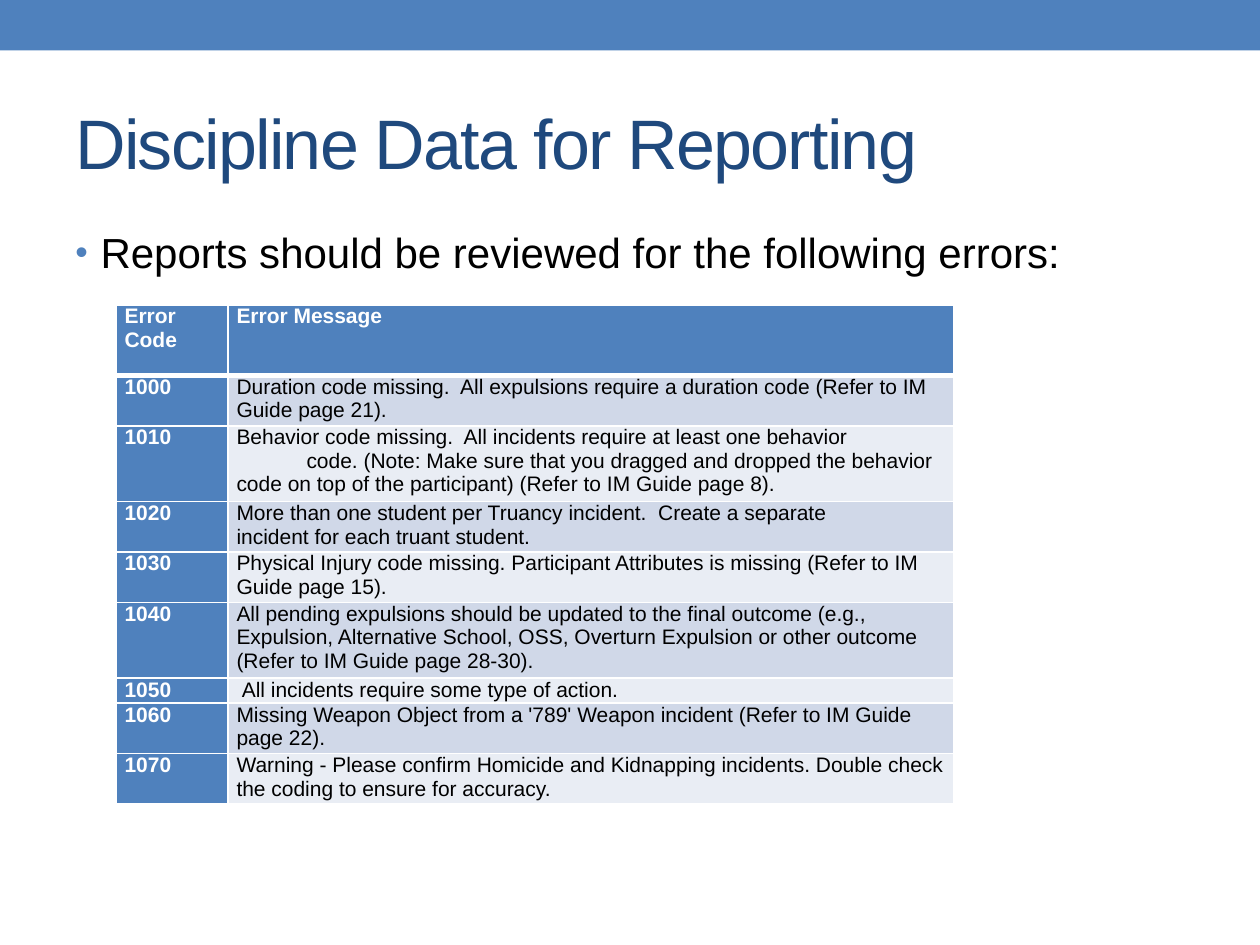
from dataclasses import dataclass

from lxml.etree import SubElement
from pptx import Presentation
from pptx.dml.color import RGBColor
from pptx.enum.shapes import MSO_SHAPE
from pptx.enum.text import MSO_ANCHOR
from pptx.oxml.ns import qn
from pptx.util import Pt

TITLE = "Discipline Data for Reporting"
LEAD = "Reports should be reviewed for the following errors:"
HEADINGS = ("Error Code", "Error Message")
# Code, number of lines, paragraphs as (first-line indent, text)
ERRORS = [
    ("1000", 2, [(0, "Duration code missing.  All expulsions require a duration code "
                     "(Refer to IM Guide page 21).")]),
    ("1010", 3, [(0, "Behavior code missing.  All incidents require at least one behavior"),
                 (40, "code. (Note: Make sure that you dragged and dropped the behavior "
                      "code on top of the participant) (Refer to IM Guide page 8).")]),
    ("1020", 2, [(0, "More than one student per Truancy incident.  Create a separate"),
                 (0, "incident for each truant student.")]),
    ("1030", 2, [(0, "Physical Injury code missing. Participant Attributes is missing "
                     "(Refer to IM Guide page 15).")]),
    ("1040", 3, [(0, "All pending expulsions should be updated to the final outcome (e.g., "
                     "Expulsion, Alternative School, OSS, Overturn Expulsion or other outcome "
                     "(Refer to IM Guide page 28-30).")]),
    ("1050", 1, [(3, "All incidents require some type of action.")]),
    ("1060", 2, [(0, "Missing Weapon Object from a '789' Weapon incident "
                     "(Refer to IM Guide page 22).")]),
    ("1070", 2, [(0, "Warning - Please confirm Homicide and Kidnapping incidents. "
                     "Double check the coding to ensure for accuracy.")]),
]


@dataclass(frozen=True)
class Theme:
    font: str = "Arial"
    accent: str = "4F81BD"
    title: str = "1F497D"
    text: str = "000000"
    white: str = "FFFFFF"
    bands: tuple = ("D0D8E8", "E9EDF4")
    title_size: int = 40
    lead_size: int = 24
    table_size: int = 12


THEME = Theme()
COLUMN_WIDTHS = (64, 415)
HEADER_LINES = 3
LINE_HEIGHT = 13.43


def style(para, size, colour, bold=False):
    font = para.font
    font.name, font.size, font.bold = THEME.font, Pt(size), bold
    font.color.rgb = RGBColor.from_string(colour)


def add_text(page, text, top, height, size, colour):
    box = page.shapes.add_textbox(Pt(36), Pt(top), Pt(648), Pt(height))
    box.text_frame.word_wrap = True
    para = box.text_frame.paragraphs[0]
    para.add_run().text = text
    style(para, size, colour)
    return box.text_frame, para


def add_bullet(para):
    properties = para._p.get_or_add_pPr()
    properties.set("marL", str(Pt(14.4)))
    properties.set("indent", str(-Pt(14.4)))
    defaults = properties.find(qn("a:defRPr"))
    colour = SubElement(properties, qn("a:buClr"))
    SubElement(colour, qn("a:srgbClr"), val=THEME.accent)
    size = SubElement(properties, qn("a:buSzPct"), val="85000")
    font = SubElement(properties, qn("a:buFont"), typeface=THEME.font)
    symbol = SubElement(properties, qn("a:buChar"), char="•")
    for part in (colour, size, font, symbol):
        defaults.addprevious(part)


def add_borders(cell, bottom):
    properties = cell._tc.get_or_add_tcPr()
    for side, width in (("L", 1), ("R", 1), ("T", 1), ("B", bottom)):
        line = SubElement(properties, qn(f"a:ln{side}"), w=str(Pt(width)))
        fill = SubElement(line, qn("a:solidFill"))
        SubElement(fill, qn("a:srgbClr"), val=THEME.white)


def fill_cell(cell, paragraphs, fill, colour, bold, bottom=1):
    add_borders(cell, bottom)
    cell.fill.solid()
    cell.fill.fore_color.rgb = RGBColor.from_string(fill)
    cell.margin_left = cell.margin_right = Pt(5)
    cell.margin_top = cell.margin_bottom = 0
    for index, (indent, text) in enumerate(paragraphs):
        frame = cell.text_frame
        para = frame.add_paragraph() if index else frame.paragraphs[0]
        para.add_run().text = text
        style(para, THEME.table_size, colour, bold)
        if indent:
            para._p.get_or_add_pPr().set("indent", str(Pt(indent)))


def add_error_table(page):
    lines = [HEADER_LINES] + [count for _, count, _ in ERRORS]
    table = page.shapes.add_table(
        len(lines), len(COLUMN_WIDTHS), Pt(66.2), Pt(174.2),
        Pt(sum(COLUMN_WIDTHS)), Pt(sum(lines) * LINE_HEIGHT)).table
    for column, width in zip(table.columns, COLUMN_WIDTHS):
        column.width = Pt(width)
    for row, count in zip(table.rows, lines):
        row.height = Pt(count * LINE_HEIGHT)
    for column, heading in enumerate(HEADINGS):
        fill_cell(table.cell(0, column), [(0, heading)], THEME.accent, THEME.white, True, 3)
    for row, (code, _, message) in enumerate(ERRORS, 1):
        band = THEME.bands[(row - 1) % 2]
        fill_cell(table.cell(row, 0), [(0, code)], THEME.accent, THEME.white, True)
        fill_cell(table.cell(row, 1), message, band, THEME.text, False)


def main():
    deck = Presentation()
    deck.slide_width, deck.slide_height = Pt(720), Pt(540)
    page = deck.slides.add_slide(deck.slide_layouts[6])

    banner = page.shapes.add_shape(MSO_SHAPE.RECTANGLE, 0, 0, Pt(720), Pt(28.8))
    banner.shadow.inherit = False
    banner.fill.solid()
    banner.fill.fore_color.rgb = RGBColor.from_string(THEME.accent)
    banner.line.fill.background()

    frame, para = add_text(page, TITLE, 42, 78, THEME.title_size, THEME.title)
    frame.vertical_anchor = MSO_ANCHOR.MIDDLE
    para.runs[0].font._element.set("spc", "-100")

    _, para = add_text(page, LEAD, 126, 384, THEME.lead_size, THEME.text)
    para.space_before = Pt(4.8)
    add_bullet(para)

    add_error_table(page)
    deck.save("out.pptx")


if __name__ == "__main__":
    main()
